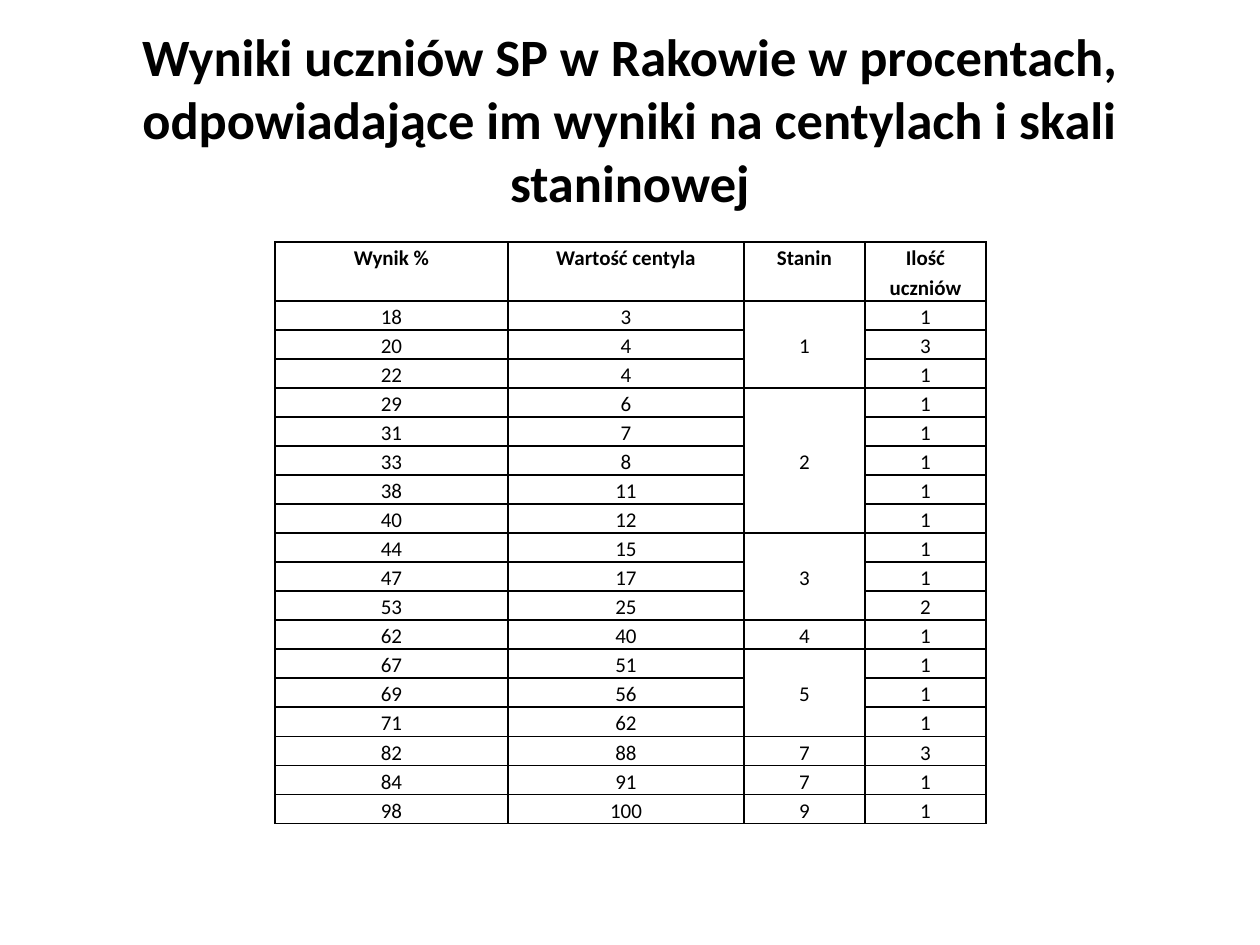
import dataclasses

import lxml.etree
import pptx
import pptx.dml.color
import pptx.enum.text
import pptx.oxml.ns
import pptx.util

EMU_PER_PX = 914400 / 126


@dataclasses.dataclass(frozen=True)
class Theme:
    """Colours, font and type sizes of the slide."""

    font: str = "Calibri"
    text: str = "000000"
    background: str = "FFFFFF"
    border: str = "000000"
    title_size: int = 30
    table_size: int = 12
    border_width: int = 1


THEME = Theme()
TITLE = (
    "Wyniki uczniów SP w Rakowie w procentach, "
    "odpowiadające im wyniki na centylach i skali staninowej"
)
HEADERS = ("Wynik %", "Wartość centyla", "Stanin", "Ilość uczniów")
STANIN_GROUPS = (
    (1, ((18, 3, 1), (20, 4, 3), (22, 4, 1))),
    (2, ((29, 6, 1), (31, 7, 1), (33, 8, 1), (38, 11, 1), (40, 12, 1))),
    (3, ((44, 15, 1), (47, 17, 1), (53, 25, 2))),
    (4, ((62, 40, 1),)),
    (5, ((67, 51, 1), (69, 56, 1), (71, 62, 1))),
    (7, ((82, 88, 3),)),
    (7, ((84, 91, 1),)),
    (9, ((98, 100, 1),)),
)
STANIN_COLUMN = 2
COLUMN_WIDTHS = (233, 236, 121, 121)
HEADER_HEIGHT = 59
ROW_HEIGHT = 29
CELL_MARGIN = 9


def px(length):
    """Turn a length in px into EMU."""
    return pptx.util.Emu(round(length * EMU_PER_PX))


def write_text(text_frame, text, *, size, bold=False, line_spacing=None):
    """Write one centred paragraph in the theme font."""
    paragraph = text_frame.paragraphs[0]
    paragraph.alignment = pptx.enum.text.PP_ALIGN.CENTER
    paragraph.line_spacing = line_spacing
    run = paragraph.add_run()
    run.text = text
    run.font.name = THEME.font
    run.font.size = pptx.util.Pt(size)
    run.font.bold = bold
    run.font.color.rgb = pptx.dml.color.RGBColor.from_string(THEME.text)


def style_cell(cell):
    """Give a cell thin borders, a plain fill and narrow margins."""
    cell.margin_left = cell.margin_right = px(CELL_MARGIN)
    cell.margin_top = cell.margin_bottom = 0
    properties = cell._tc.get_or_add_tcPr()
    qualified = pptx.oxml.ns.qn
    for side in ("lnL", "lnR", "lnT", "lnB"):
        line = lxml.etree.SubElement(
            properties,
            qualified(f"a:{side}"),
            w=str(pptx.util.Pt(THEME.border_width)),
        )
        fill = lxml.etree.SubElement(line, qualified("a:solidFill"))
        lxml.etree.SubElement(fill, qualified("a:srgbClr"), val=THEME.border)
    cell.fill.solid()
    cell.fill.fore_color.rgb = pptx.dml.color.RGBColor.from_string(THEME.background)


def add_title(slide, left, top, width, height):
    """Place the slide title in the given box."""
    shape = slide.shapes.add_textbox(px(left), px(top), px(width), px(height))
    text_frame = shape.text_frame
    text_frame.word_wrap = True
    text_frame.vertical_anchor = pptx.enum.text.MSO_ANCHOR.MIDDLE
    write_text(text_frame, TITLE, size=THEME.title_size, bold=True)


def add_results_table(slide, left, top):
    """Place the results table with one merged stanin cell per group."""
    row_count = 1 + sum(len(results) for _, results in STANIN_GROUPS)
    height = HEADER_HEIGHT + ROW_HEIGHT * (row_count - 1)
    shape = slide.shapes.add_table(
        row_count, len(HEADERS), px(left), px(top), px(sum(COLUMN_WIDTHS)), px(height)
    )
    table = shape.table
    table.first_row = table.horz_banding = False
    for column, width in zip(table.columns, COLUMN_WIDTHS):
        column.width = px(width)
    for index, row in enumerate(table.rows):
        row.height = px(ROW_HEIGHT if index else HEADER_HEIGHT)
    for cell in table.iter_cells():
        style_cell(cell)

    def write_cell(row, column, value, bold=False):
        """Write a value into one table cell."""
        write_text(
            table.cell(row, column).text_frame,
            str(value),
            size=THEME.table_size,
            bold=bold,
            line_spacing=1.15,
        )

    for column, header in enumerate(HEADERS):
        write_cell(0, column, header, bold=True)
    first = 1
    for stanin, results in STANIN_GROUPS:
        last = first + len(results) - 1
        stanin_cell = table.cell(first, STANIN_COLUMN)
        if last > first:
            stanin_cell.merge(table.cell(last, STANIN_COLUMN))
            stanin_cell.vertical_anchor = pptx.enum.text.MSO_ANCHOR.MIDDLE
        write_cell(first, STANIN_COLUMN, stanin)
        for row, result in enumerate(results, first):
            for column, value in zip((0, 1, 3), result):
                write_cell(row, column, value)
        first = last + 1


def main():
    """Build and save the presentation."""
    presentation = pptx.Presentation()
    presentation.slide_width = px(1260)
    presentation.slide_height = px(945)
    slide = presentation.slides.add_slide(presentation.slide_layouts[6])
    add_title(slide, 63, 40, 1134, 157)
    add_results_table(slide, 275, 242)
    presentation.save("out.pptx")


if __name__ == "__main__":
    main()
